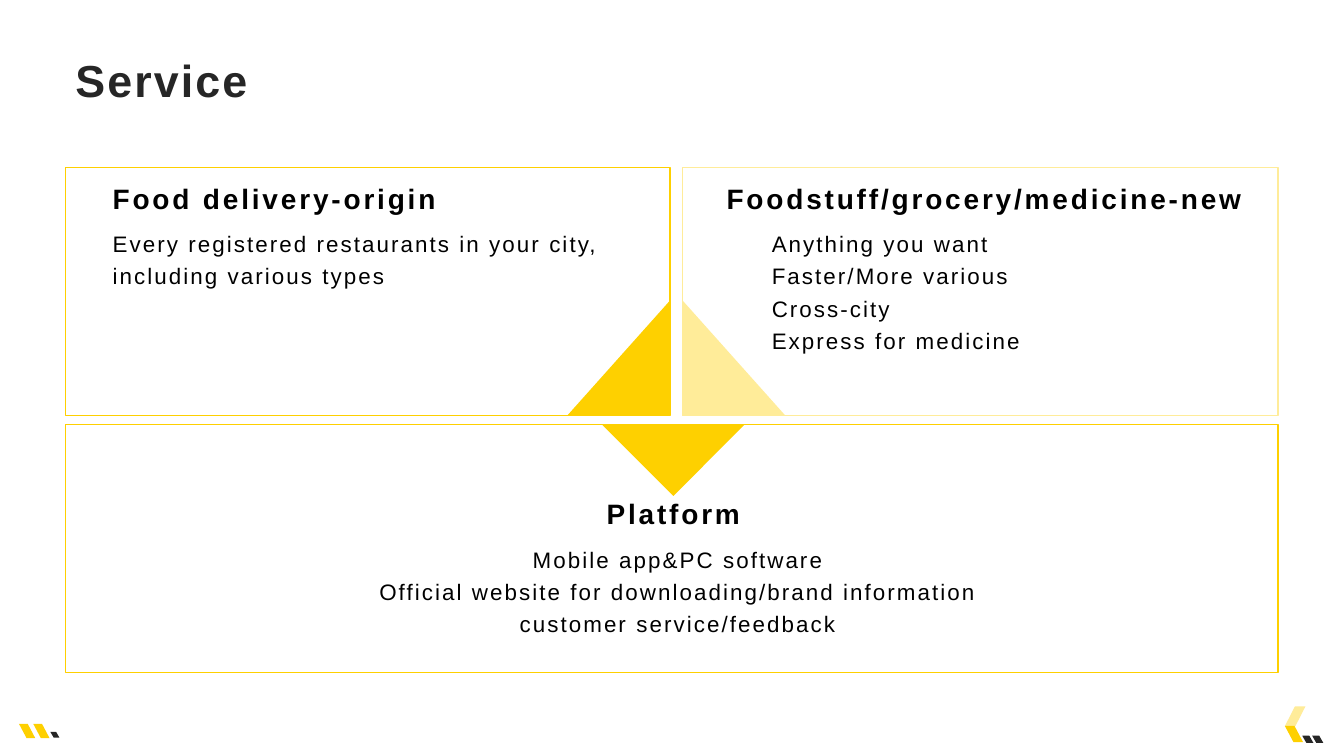
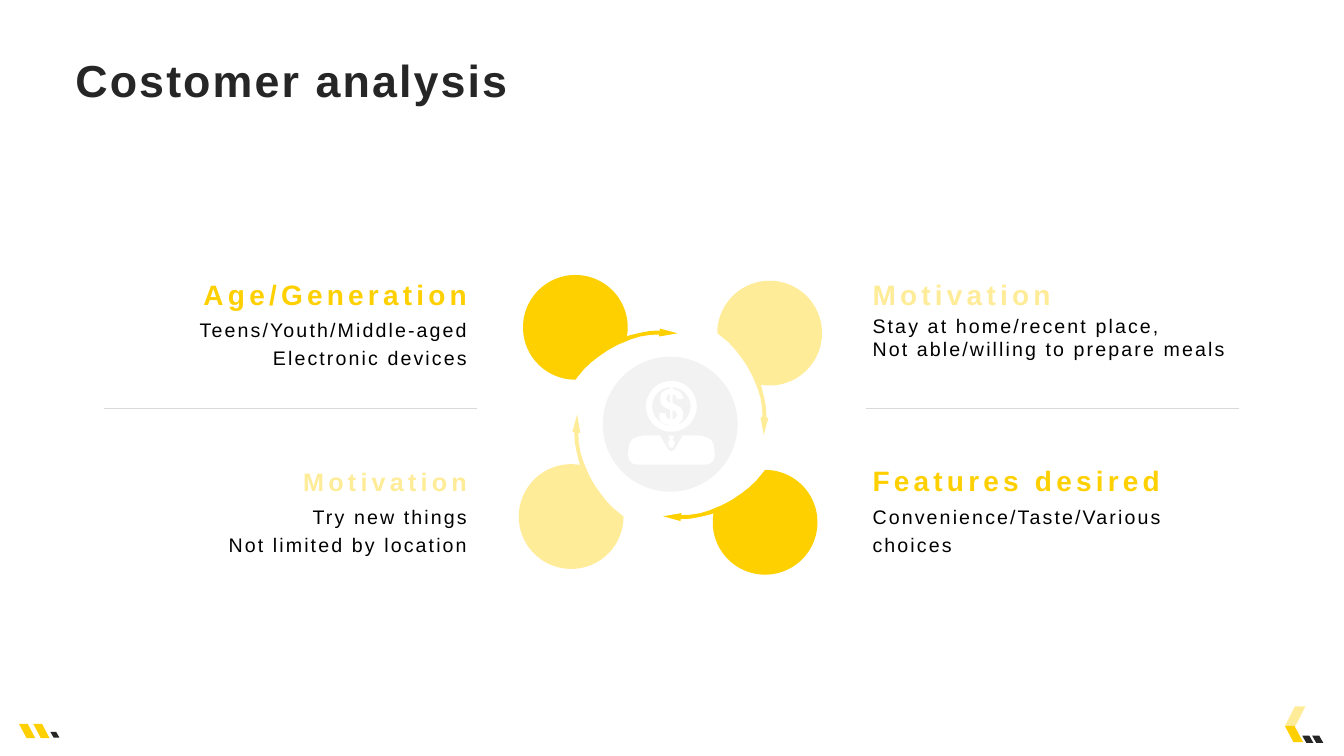
from math import cos, radians, sin

from pptx import Presentation
from pptx.dml.color import RGBColor
from pptx.enum.shapes import MSO_CONNECTOR, MSO_SHAPE as SHAPE
from pptx.enum.text import MSO_ANCHOR as ANCHOR, PP_ALIGN as ALIGN
from pptx.oxml.ns import qn
from pptx.oxml.xmlchemy import OxmlElement
from pptx.util import Cm, Pt

# Shared look
FONT = "Arial"
YELLOW, PALE, DARK = "FED000", "FFEC99", "262626"
BLACK, WHITE, GREY, RULE = "000000", "FFFFFF", "F2F2F2", "D9D9D9"
PLAIN_INSETS = (0.25, 0.13, 0.25, 0.13)
TITLE_INSETS = (0.2, 0.1, 0.2, 0.1)
HEADING_INSETS = (0.25, 0.13, 0.25, 0)
BODY_INSETS = (0.25, 0, 0.25, 0.13)

# Corner marks: left, top, width, height, slant, colour, flipped
CORNER_MARKS = [
    (32.38, 17.8, 0.52, 0.5, 0.51, PALE, False),
    (32.38, 18.29, 0.46, 0.41, 0.53, YELLOW, True),
    (32.82, 18.54, 0.28, 0.18, 0.57, DARK, True),
    (33.07, 18.54, 0.28, 0.18, 0.57, DARK, True),
    (0.48, 18.24, 0.41, 0.36, 0.53, YELLOW, True),
    (0.84, 18.24, 0.41, 0.36, 0.53, YELLOW, True),
    (1.27, 18.44, 0.23, 0.15, 0.57, DARK, True),
]

# Arrow that leaves each circle of the cycle, in cm from the petal's corner
PETAL_RADIUS = 1.32
PETAL_ARROW = [
    (2.69, 1.52), (2.94, 1.46), (3.2, 1.41), (3.45, 1.4), (3.45, 1.35),
    (3.89, 1.47), (3.43, 1.55), (3.43, 1.5), (3.2, 1.51), (2.95, 1.55),
    (2.72, 1.62), (2.41, 1.75), (2.31, 1.8), (2.13, 1.9), (1.9, 2.06),
    (1.72, 2.2), (1.55, 2.36), (1.4, 2.54),
]

# Icon outlines, in cm from the middle of the icon's top edge
ICON_ORIGIN = (16.92, 9.6)
DOLLAR = [
    [(-0.03, 1.14), (-0.03, 1.12), (-0.1, 1.1), (-0.2, 1.07), (-0.28, 1.01),
     (-0.3, 0.93), (-0.3, 0.81), (-0.15, 0.81), (-0.13, 0.91), (-0.1, 0.95),
     (-0.03, 0.97), (-0.03, 0.72), (-0.08, 0.71), (-0.15, 0.68),
     (-0.23, 0.61), (-0.28, 0.53), (-0.28, 0.38), (-0.23, 0.28),
     (-0.13, 0.22), (-0.03, 0.2), (-0.03, 0.15), (0.03, 0.15), (0.03, 0.2),
     (0.18, 0.25), (0.27, 0.34), (0.3, 0.46), (0.13, 0.46), (0.12, 0.38),
     (0.03, 0.33), (0.03, 0.56), (0.23, 0.66), (0.29, 0.75), (0.3, 0.84),
     (0.28, 0.97), (0.2, 1.07), (0.12, 1.11), (0.03, 1.12), (0.03, 1.14)],
    [(-0.03, 0.33), (-0.1, 0.36), (-0.13, 0.43), (-0.1, 0.51), (-0.03, 0.56)],
    [(0.03, 0.74), (0.1, 0.76), (0.15, 0.86), (0.1, 0.94), (0.03, 0.97)],
]
BUST_HALF = [
    (0, 1.78), (0.08, 1.73), (0.29, 1.37), (0.69, 1.37), (0.86, 1.41),
    (0.99, 1.47), (1.06, 1.59), (1.09, 1.78), (1.09, 1.88), (1.06, 2.0),
    (0.98, 2.08), (0.86, 2.11),
]
TIE_HALF = [(0, 1.37), (0.08, 1.39), (0.03, 1.47), (0.09, 1.55), (0.04, 1.68)]


def colour(value):
    return RGBColor.from_string(value)


def paint(shape, fill=None, line=None):
    shape.shadow.inherit = False
    if fill:
        shape.fill.solid()
        shape.fill.fore_color.rgb = colour(fill)
    else:
        shape.fill.background()
    if line:
        shape.line.color.rgb = colour(line)
        shape.line.width = Pt(1)
    else:
        shape.line.fill.background()


def add_preset(slide, kind, box, fill=None, line=None, adjust=None, flip=False):
    shape = slide.shapes.add_shape(kind, *map(Cm, box))
    paint(shape, fill, line)
    if adjust is not None:
        shape.adjustments[0] = adjust
    if flip:
        shape._element.spPr.find(qn("a:xfrm")).set("flipH", "1")
    return shape


def add_outline(slide, origin, contours, fill):
    """Draw closed contours, given in cm from the origin, as one shape."""
    left, top = origin
    placed = [[(Cm(left + x), Cm(top + y)) for x, y in contour]
              for contour in contours]
    builder = slide.shapes.build_freeform(*placed[0][0], scale=1.0)
    for number, points in enumerate(placed):
        if number:
            builder.move_to(*points[0])
        builder.add_line_segments(points[1:], close=True)
    shape = builder.convert_to_shape()
    paint(shape, fill)
    return shape


def add_text(slide, box, lines, size, color=BLACK, bold=False, tracking=1.5,
             align=ALIGN.LEFT, anchor=ANCHOR.TOP, spacing=1.2,
             insets=PLAIN_INSETS):
    text_frame = slide.shapes.add_textbox(*map(Cm, box)).text_frame
    text_frame.word_wrap = True
    text_frame.vertical_anchor = anchor
    (text_frame.margin_left, text_frame.margin_top,
     text_frame.margin_right, text_frame.margin_bottom) = map(Cm, insets)
    text_frame.text = "\n".join(lines)
    for paragraph in text_frame.paragraphs:
        paragraph.alignment = align
        paragraph.line_spacing = spacing
        for run in paragraph.runs:
            font = run.font
            font.name, font.size, font.bold = FONT, Pt(size), bold
            font.color.rgb = colour(color)
            run._r.get_or_add_rPr().set("spc", str(round(tracking * 100)))


def add_heading(slide, box, text, size=20, tracking=2, **style):
    add_text(slide, box, [text], size, bold=True, tracking=tracking,
             anchor=ANCHOR.BOTTOM, **style)


def add_rule(slide, left, right, y):
    line = slide.shapes.add_connector(
        MSO_CONNECTOR.STRAIGHT, Cm(left), Cm(y), Cm(right), Cm(y))
    line.line.color.rgb = colour(RULE)
    line.line.width = Pt(0.25)
    line._element.spPr.append(OxmlElement("a:effectLst"))


def new_slide(presentation, title):
    slide = presentation.slides.add_slide(presentation.slide_layouts[6])
    for *box, slant, fill, flip in CORNER_MARKS:
        add_preset(slide, SHAPE.PARALLELOGRAM, box, fill, adjust=slant, flip=flip)
    add_heading(slide, (1.7, 1.08, 30.48, 1.7), title, size=32, tracking=1.5,
                color=DARK, spacing=1.0, insets=TITLE_INSETS)
    return slide


def add_petal(slide, left, top, rotation, fill):
    """A circle with an arrow, turned as a whole."""
    circle = [(PETAL_RADIUS * (1 + cos(radians(angle))),
               PETAL_RADIUS * (1 + sin(radians(angle))))
              for angle in range(90, 371, 4)]
    petal = add_outline(slide, (left, top), [circle + PETAL_ARROW], fill)
    petal.rotation = rotation


def mirrored(half):
    return half + [(-x, y) for x, y in reversed(half)]


def add_customer_icon(slide):
    x, y = ICON_ORIGIN
    add_preset(slide, SHAPE.DONUT, (x - 0.64, y, 1.28, 1.28), WHITE, adjust=0.12)
    add_outline(slide, ICON_ORIGIN, DOLLAR, WHITE)
    for half in (BUST_HALF, TIE_HALF):
        add_outline(slide, ICON_ORIGIN, [mirrored(half)], WHITE)


def service_slide(presentation):
    slide = new_slide(presentation, "Service")
    # Frame, its colour, heading box, heading, body box, body lines, alignment
    panels = [
        ((1.65, 4.22, 15.24, 6.25), YELLOW,
         (2.59, 4.22, 12.4, 1.32), "Food delivery-origin",
         (2.59, 5.54, 13.49, 3.61),
         ["Every registered restaurants in your city, including various types"],
         ALIGN.LEFT),
        ((17.2, 4.22, 15.01, 6.25), PALE,
         (18.06, 4.22, 14.15, 1.32), "Foodstuff/grocery/medicine-new",
         (19.2, 5.54, 12.37, 3.61),
         ["Anything you want", "Faster/More various", "Cross-city",
          "Express for medicine"], ALIGN.LEFT),
        ((1.65, 10.7, 30.56, 6.25), YELLOW,
         (10.77, 12.17, 12.4, 1.32), "Platform",
         (2.59, 13.49, 28.98, 3.48),
         ["Mobile app&PC software",
          "Official website for downloading/brand information",
          "customer service/feedback"], ALIGN.CENTER),
    ]
    for frame, line, heading_box, heading, body_box, body, align in panels:
        add_preset(slide, SHAPE.RECTANGLE, frame, line=line)
        add_text(slide, body_box, body, 16, align=align)
        add_heading(slide, heading_box, heading, align=align)
    # Triangles that meet in the middle
    triangle = SHAPE.RIGHT_TRIANGLE
    add_preset(slide, triangle, (15.7, 9.43, 2.54, 2.54), YELLOW).rotation = 315
    add_preset(slide, triangle, (14.3, 7.57, 2.59, 2.9), YELLOW, flip=True)
    add_preset(slide, triangle, (17.2, 7.57, 2.59, 2.9), PALE)


def customer_slide(presentation):
    slide = new_slide(presentation, "Costomer analysis")
    # Cycle
    add_preset(slide, SHAPE.OVAL, (15.19, 8.99, 3.4, 3.4), GREY)
    for petal in [(17.45, 7.7, 90, PALE), (16.71, 11.84, 180, YELLOW),
                  (13.18, 6.93, 0, YELLOW), (12.45, 11.07, 270, PALE)]:
        add_petal(slide, *petal)
    add_customer_icon(slide)
    # Rules between the upper and lower topics
    for left in (2.62, 21.82):
        add_rule(slide, left, left + 9.4, 10.29)
    # Topics: left, width, alignment, row, heading, size, colour, lines, spacing
    left_side = (4.5, 7.52, ALIGN.RIGHT)
    right_side = (21.74, 9.47, ALIGN.LEFT)
    upper, lower = (6.71, 7.9), (11.4, 12.6)
    topics = [
        (*left_side, upper, "Age/Generation", 20, YELLOW,
         ["Teens/Youth/Middle-aged", "Electronic devices"], 1.2),
        (*left_side, lower, "Motivation", 18, PALE,
         ["Try new things", "Not limited by location"], 1.2),
        (*right_side, upper, "Motivation", 20, PALE,
         ["Stay at home/recent place,", "Not able/willing to prepare meals"], 1.0),
        (21.74, 7.95, ALIGN.LEFT, lower, "Features desired", 20, YELLOW,
         ["Convenience/Taste/Various choices"], 1.2),
    ]
    for left, width, align, row, heading, size, color, lines, spacing in topics:
        heading_top, body_top = row
        add_heading(slide, (left, heading_top, width, 1.12), heading, size, 3,
                    color=color, align=align, spacing=1.1, insets=HEADING_INSETS)
        add_text(slide, (left, body_top, width, 1.75), lines, 14, align=align,
                 spacing=spacing, insets=BODY_INSETS)


def main():
    presentation = Presentation()
    presentation.slide_width = Cm(33.87)
    presentation.slide_height = Cm(19.05)
    service_slide(presentation)
    customer_slide(presentation)
    presentation.save("out.pptx")


if __name__ == "__main__":
    main()
